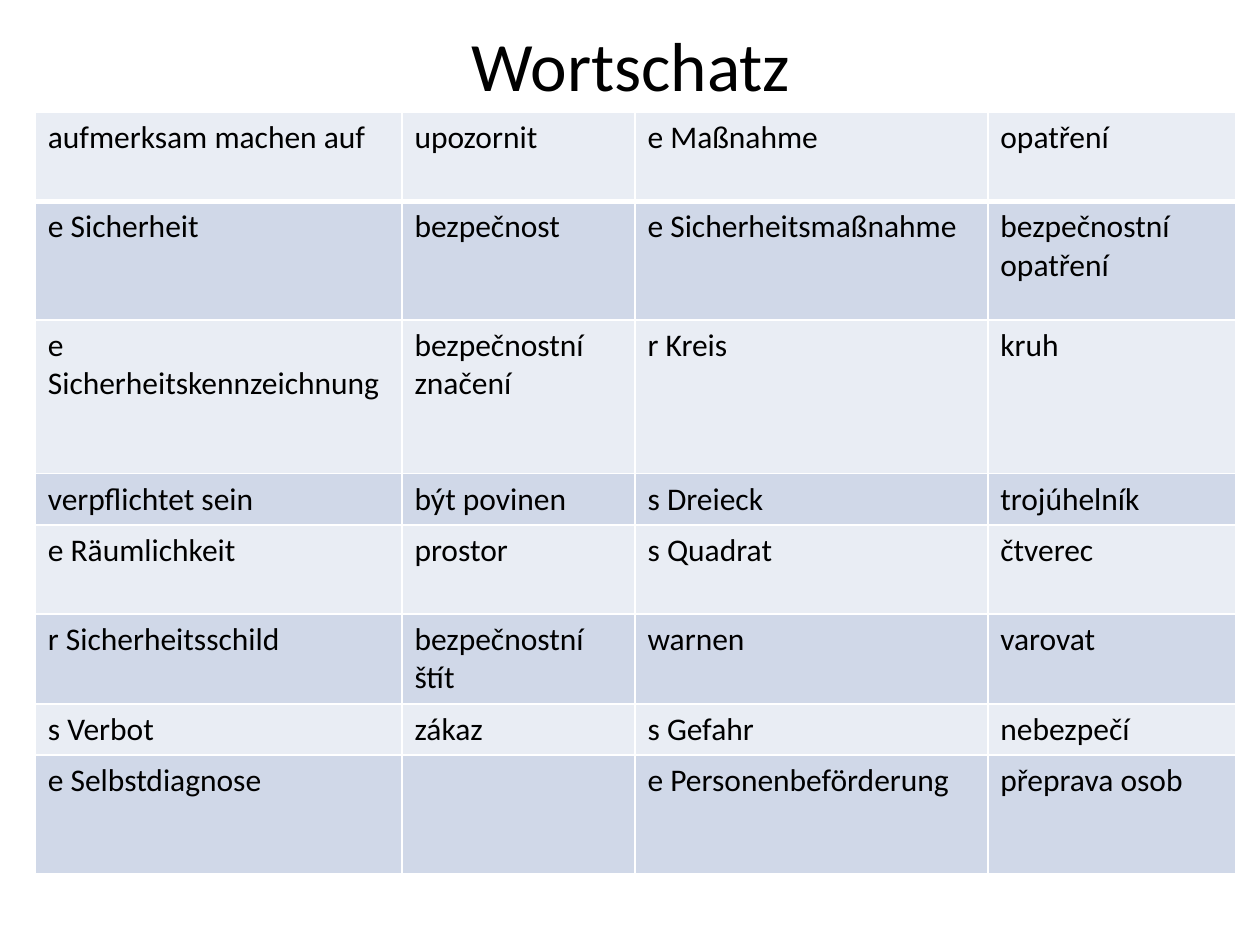
"""Build a vocabulary slide with a German-Czech word table."""
from lxml import etree
from pptx import Presentation
from pptx import util as u
from pptx.dml.color import RGBColor
from pptx.enum import text
from pptx.oxml import ns

TITLE = "Wortschatz"
WORDS = [
    ("aufmerksam machen auf", "upozornit", "e Maßnahme", "opatření"),
    ("e Sicherheit", "bezpečnost", "e Sicherheitsmaßnahme", "bezpečnostní opatření"),
    ("e Sicherheitskennzeichnung", "bezpečnostní značení", "r Kreis", "kruh"),
    ("verpflichtet sein", "být povinen", "s Dreieck", "trojúhelník"),
    ("e Räumlichkeit", "prostor", "s Quadrat", "čtverec"),
    ("r Sicherheitsschild", "bezpečnostní štít", "warnen", "varovat"),
    ("s Verbot", "zákaz", "s Gefahr", "nebezpečí"),
    ("e Selbstdiagnose", "", "e Personenbeförderung", "přeprava osob"),
]
WIDTHS = [2.91, 1.85, 2.8, 1.97]
HEIGHTS = [0.71, 0.94, 1.22, 0.4, 0.71, 0.71, 0.4, 0.94]
FONT = "Calibri"
BLACK = RGBColor(0, 0, 0)
WHITE = RGBColor(255, 255, 255)
BANDS = [RGBColor(0xE9, 0xED, 0xF4), RGBColor(0xD0, 0xD8, 0xE8)]


def write(para, words, size):
    run = para.add_run()
    run.text = words
    run.font.name = FONT
    run.font.size = u.Pt(size)
    run.font.color.rgb = BLACK


def edge(cell, side, width):
    props = cell._tc.get_or_add_tcPr()
    line = etree.SubElement(props, ns.qn("a:ln" + side), w=str(u.Pt(width)))
    fill = etree.SubElement(line, ns.qn("a:solidFill"))
    etree.SubElement(fill, ns.qn("a:srgbClr"), val=str(WHITE))


def add_title(slide):
    title = slide.shapes.title
    title.left, title.top = u.Inches(0.51), u.Inches(0.13)
    title.width, title.height = u.Inches(9), u.Inches(0.75)
    frame = title.text_frame
    frame.vertical_anchor = text.MSO_ANCHOR.MIDDLE
    para = frame.paragraphs[0]
    para.alignment = text.PP_ALIGN.CENTER
    write(para, TITLE, 39.6)


def add_words(slide):
    table = slide.shapes.add_table(
        len(WORDS), len(WIDTHS), u.Inches(0.28), u.Inches(0.89),
        u.Inches(sum(WIDTHS)), u.Inches(sum(HEIGHTS))).table
    table.first_row = False
    for col, width in zip(table.columns, WIDTHS):
        col.width = u.Inches(width)
    for r, (row, height) in enumerate(zip(table.rows, HEIGHTS)):
        row.height = u.Inches(height)
        for cell, words in zip(row.cells, WORDS[r]):
            for side in "LRTB":
                thick = (r, side) in ((0, "B"), (1, "T"))
                edge(cell, side, 3 if thick else 1)
            cell.fill.solid()
            cell.fill.fore_color.rgb = BANDS[r % 2]
            if words:
                write(cell.text_frame.paragraphs[0], words, 18)


def main():
    deck = Presentation()
    deck.slide_width, deck.slide_height = u.Inches(10), u.Inches(7.5)
    slide = deck.slides.add_slide(deck.slide_layouts[5])
    add_title(slide)
    add_words(slide)
    deck.save("out.pptx")


if __name__ == "__main__":
    main()
